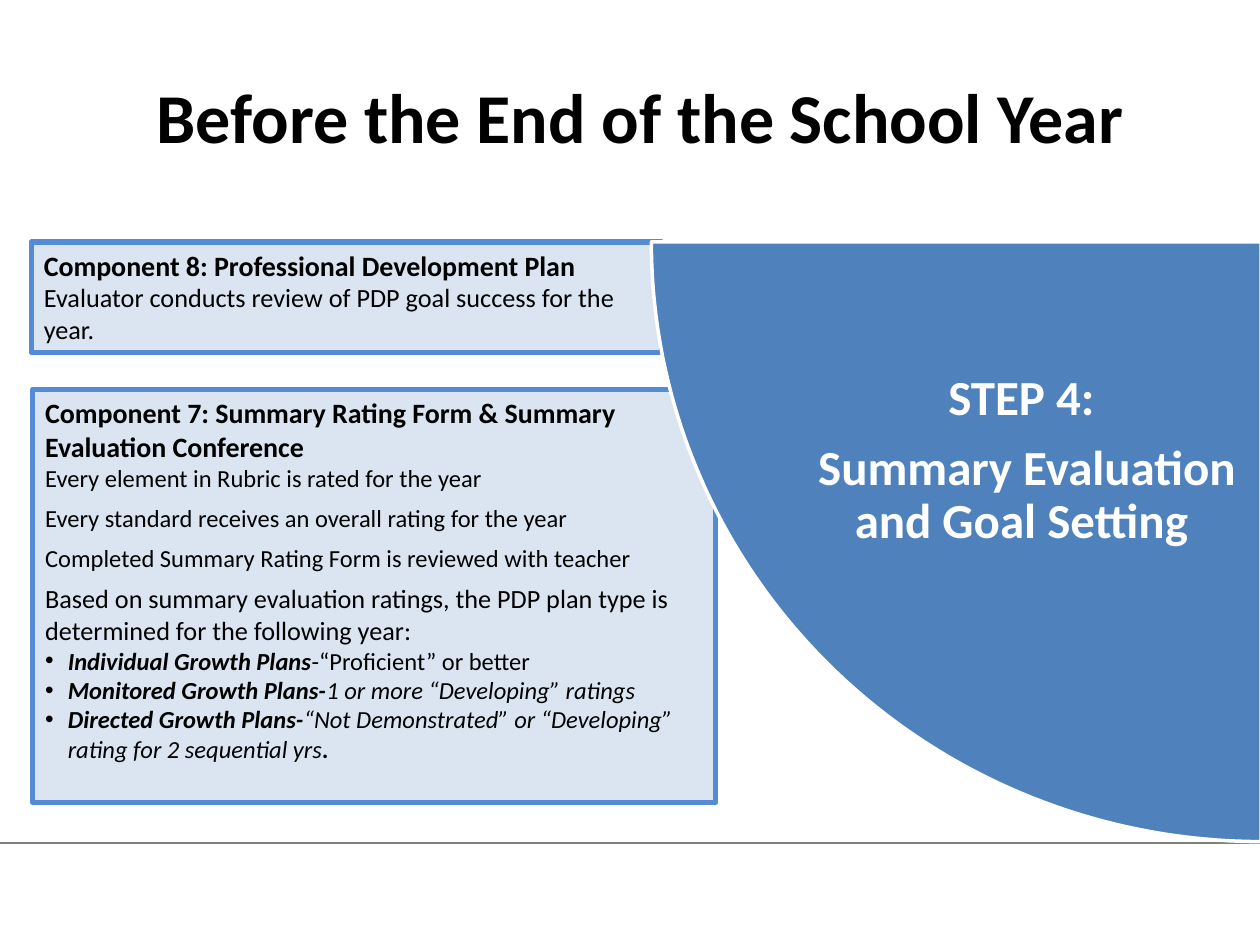
from math import cos, pi, sin

from lxml.etree import SubElement
from pptx import Presentation
from pptx.dml.color import RGBColor
from pptx.enum.shapes import MSO_CONNECTOR as Connector, MSO_SHAPE as Shape
from pptx.enum.text import MSO_ANCHOR as Anchor, PP_ALIGN as Align
from pptx.oxml.ns import qn
from pptx.util import Inches, Pt

FONT = "Calibri"
BLACK = "000000"
WHITE = "FFFFFF"
ARC_STEPS = 90


def color(value):
    return RGBColor.from_string(value)


def paint(shape, fill, line, width):
    shape.shadow.inherit = False
    shape.fill.solid()
    shape.fill.fore_color.rgb = color(fill)
    shape.line.color.rgb = color(line)
    shape.line.width = Pt(width)


def prepare_frame(shape, anchor=Anchor.TOP):
    frame = shape.text_frame
    frame.word_wrap = True
    frame.vertical_anchor = anchor
    return frame


def add_paragraph(frame, runs, size, hanging=0, bullet=False, before=0,
                  align=Align.LEFT, spacing=1.0, fill=BLACK):
    first = frame.paragraphs[0]
    paragraph = frame.add_paragraph() if first.runs else first
    properties = paragraph._p.get_or_add_pPr()
    if hanging:
        properties.set("marL", str(Inches(hanging)))
        properties.set("indent", str(-Inches(hanging)))
    if bullet:
        SubElement(properties, qn("a:buFont"), typeface="Arial")
        SubElement(properties, qn("a:buChar"), char="•")
    paragraph.alignment = align
    paragraph.line_spacing = spacing
    paragraph.space_before = Pt(before)
    for text, style in runs:
        run = paragraph.add_run()
        run.text = text
        run.font.name = FONT
        run.font.size = Pt(size)
        run.font.bold = "b" in style
        run.font.italic = "i" in style
        run.font.color.rgb = color(fill)


def add_footer_line(slide, left, top, width):
    line = slide.shapes.add_connector(
        Connector.STRAIGHT, Inches(left), Inches(top), Inches(left + width), Inches(top))
    line.line.color.rgb = color("7F7F7F")
    line.line.width = Pt(1)
    SubElement(line._element.spPr, qn("a:effectLst"))


def add_component(slide, left, top, width, height, heading):
    panel = slide.shapes.add_shape(
        Shape.RECTANGLE, Inches(left), Inches(top), Inches(width), Inches(height))
    paint(panel, "DAE5F1", "538CD5", 3)
    frame = prepare_frame(panel)
    add_paragraph(frame, [(heading, "b")], 16)
    return frame


def add_summary_rating(slide, left, top, width, height):
    frame = add_component(
        slide, left, top, width, height,
        "Component 7: Summary Rating Form & Summary Evaluation Conference")
    ratings = [
        "Every element in Rubric is rated for the year",
        "Every standard receives an overall rating for the year",
        "Completed Summary Rating Form is reviewed with teacher",
    ]
    for index, text in enumerate(ratings):
        add_paragraph(frame, [(text, "")], 14, hanging=0.38, before=6 if index else 0)
    add_paragraph(frame, [("Based on summary evaluation ratings, the PDP plan type is "
                           "determined for the following year:", "")], 15, before=6)
    plans = [
        [("Individual Growth Plans", "bi"), ("-“Proficient” or better", "")],
        [("Monitored Growth Plans-", "bi"), ("1 or more “Developing” ratings", "i")],
        [("Directed Growth Plans-", "bi"),
         ("“Not Demonstrated” or “Developing” rating for 2 sequential yrs", "i"),
         (".", "bi")],
    ]
    for runs in plans:
        add_paragraph(frame, runs, 14, hanging=0.18, bullet=True)


def add_development_plan(slide, left, top, width, height):
    frame = add_component(
        slide, left, top, width, height, "Component 8: Professional Development Plan")
    add_paragraph(
        frame, [("Evaluator conducts review of PDP goal success for the year.", "")], 15)


def add_title(slide, left, top, width, height):
    box = slide.shapes.add_textbox(
        Inches(left), Inches(top), Inches(width), Inches(height))
    frame = prepare_frame(box, Anchor.MIDDLE)
    add_paragraph(
        frame, [("Before the End of the School Year", "b")], 40, align=Align.CENTER)


def add_step_quadrant(slide, left, top, width, height):
    right = left + width
    angles = [pi / 2 * step / ARC_STEPS for step in range(ARC_STEPS + 1)]
    arc = [(Inches(right - width * sin(angle)), Inches(top + height * cos(angle)))
           for angle in angles]
    builder = slide.shapes.build_freeform(*arc[0])
    builder.add_line_segments(arc[1:] + [(Inches(right), Inches(top))], close=True)
    paint(builder.convert_to_shape(), "4F81BD", WHITE, 2)


def add_step_label(slide, left, top, width, height):
    box = slide.shapes.add_textbox(
        Inches(left), Inches(top), Inches(width), Inches(height))
    frame = prepare_frame(box)
    for text, before in [("STEP 4: ", 0), ("Summary Evaluation and Goal Setting ", 9.8)]:
        add_paragraph(frame, [(text, "b")], 28, before=before,
                      align=Align.CENTER, spacing=0.9, fill=WHITE)


def main():
    presentation = Presentation()
    presentation.slide_width = Inches(10)
    presentation.slide_height = Inches(7.5)
    slide = presentation.slides.add_slide(presentation.slide_layouts[6])
    add_footer_line(slide, 0, 6.69, 10)
    add_summary_rating(slide, 0.26, 3.09, 5.42, 3.28)
    add_development_plan(slide, 0.25, 1.92, 5, 0.88)
    add_title(slide, 0.33, 0.42, 9.5, 1)
    add_step_quadrant(slide, 5.17, 1.92, 4.84, 4.76)
    add_step_label(slide, 6.15, 2.91, 4, 1.54)
    presentation.save("out.pptx")


if __name__ == "__main__":
    main()
